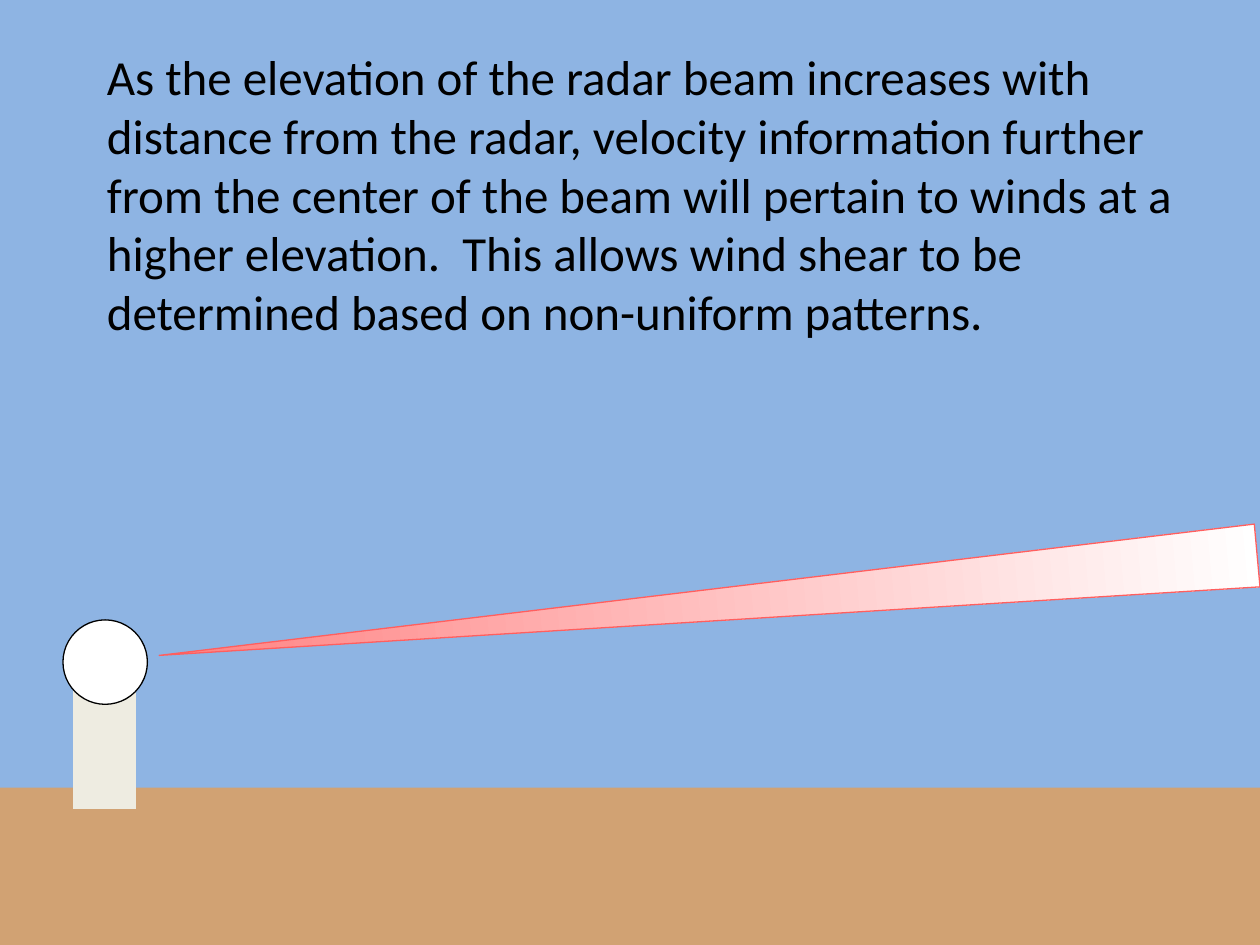
from pptx import Presentation
from pptx.dml.color import RGBColor
from pptx.enum.shapes import MSO_SHAPE
from pptx.enum.text import MSO_AUTO_SIZE
from pptx.util import Inches, Pt

RECTANGLE = MSO_SHAPE.RECTANGLE
OVAL = MSO_SHAPE.OVAL
TRIANGLE = MSO_SHAPE.ISOSCELES_TRIANGLE
FIT_TEXT = MSO_AUTO_SIZE.SHAPE_TO_FIT_TEXT

COLORS = {
    "sky": "8EB4E3",
    "ground": "D1A273",
    "tower": "EEECE1",
    "white": "FFFFFF",
    "black": "000000",
    "beam": "FF8181",
    "beam_edge": "FF5F5F",
}


def color(name):
    return RGBColor.from_string(COLORS[name])


def add_part(kind, left, top, width, height, fill=None, line=None):
    shape = slide.shapes.add_shape(
        kind, Inches(left), Inches(top), Inches(width), Inches(height))
    shape.shadow.inherit = False
    if fill:
        shape.fill.solid()
        shape.fill.fore_color.rgb = color(fill)
    if line:
        shape.line.color.rgb = color(line)
        shape.line.width = Pt(0.75)
    else:
        shape.line.fill.background()
    return shape


presentation = Presentation()
presentation.slide_width = Inches(10)
presentation.slide_height = Inches(7.5)
slide = presentation.slides.add_slide(presentation.slide_layouts[6])

# Sky
slide.background.fill.solid()
slide.background.fill.fore_color.rgb = color("sky")

# Ground, radar tower and dome
add_part(RECTANGLE, 0, 6.25, 10, 1.25, "ground")
add_part(RECTANGLE, 0.58, 5.42, 0.5, 1, "tower")
add_part(OVAL, 0.5, 4.92, 0.67, 0.67, "white", "black")

# Radar beam, fading from its tip to its far end
beam = add_part(TRIANGLE, 5.37, 0.43, 0.5, 8.75, line="beam_edge")
beam.rotation = 264.8
beam.fill.gradient()
beam.fill.gradient_angle = 270
for stop, name in zip(beam.fill.gradient_stops, ("beam", "white")):
    stop.color.rgb = color(name)

# Explanation
text_box = slide.shapes.add_textbox(
    Inches(0.75), Inches(0.32), Inches(8.67), Inches(2.46))
text_frame = text_box.text_frame
text_frame.word_wrap = True
text_frame.auto_size = FIT_TEXT
run = text_frame.paragraphs[0].add_run()
run.text = (
    "As the elevation of the radar beam increases with distance from the "
    "radar, velocity information further from the center of the beam will "
    "pertain to winds at a higher elevation.  This allows wind shear to be "
    "determined based on non-uniform patterns."
)
run.font.name = "Calibri"
run.font.size = Pt(28)
run.font.color.rgb = color("black")

presentation.save("out.pptx")
